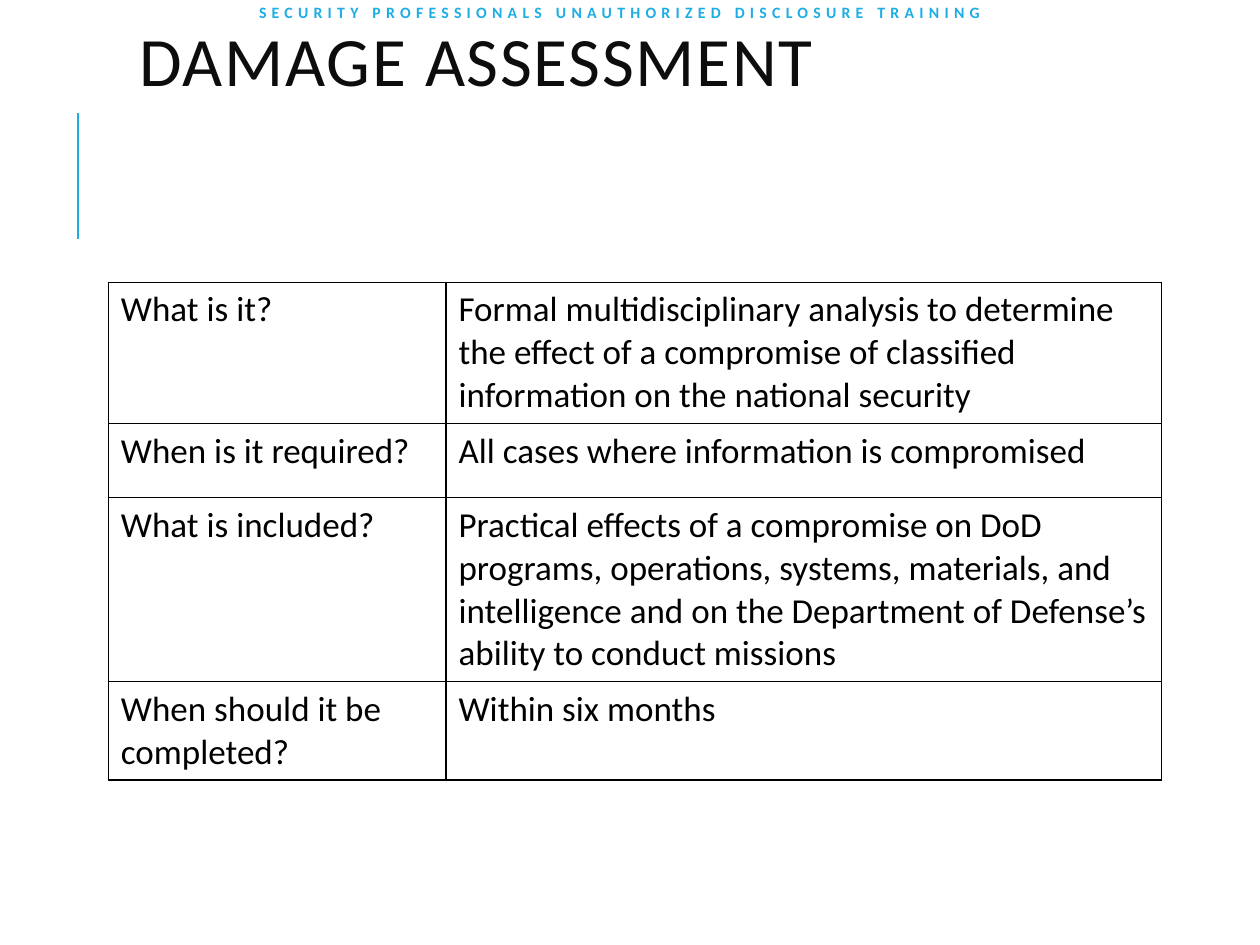
from lxml import etree
from pptx import Presentation
from pptx import util as u
from pptx.dml.color import RGBColor
from pptx.enum import shapes, text
from pptx.oxml import ns

COLORS = {"accent": "1CADE4", "title": "0D0D0D", "ink": "000000"}
FONT = "Calibri"
COLUMN_WIDTHS = [2.68, 5.68]
ROW_HEIGHTS = [1.12, 0.59, 1.46, 0.78]
ASSESSMENT = [
    ("What is it?",
     "Formal multidisciplinary analysis to determine the effect of a "
     "compromise of classified information on the national security"),
    ("When is it required?", "All cases where information is compromised"),
    ("What is included?",
     "Practical effects of a compromise on DoD programs, operations, systems, "
     "materials, and intelligence and on the Department of Defense’s ability "
     "to conduct missions"),
    ("When should it be completed?", "Within six months"),
]


def rgb(name):
    return RGBColor.from_string(COLORS[name])


def format_runs(paragraph, size, color, bold=False, spacing=0):
    for run in paragraph.runs:
        run.font.name = FONT
        run.font.size = u.Pt(size)
        run.font.bold = bold
        run.font.color.rgb = rgb(color)
        if spacing:
            run.font._element.set("spc", str(spacing * 100))


def add_label(slide, wording, box, anchor, margin, **style):
    label = slide.shapes.add_textbox(*map(u.Inches, box))
    frame = label.text_frame
    frame.word_wrap = True
    frame.vertical_anchor = anchor
    frame.margin_left = frame.margin_right = u.Inches(margin)
    frame.margin_top = frame.margin_bottom = u.Inches(margin / 2)
    frame.text = wording
    paragraph = frame.paragraphs[0]
    format_runs(paragraph, **style)
    return paragraph


def add_accent_rule(slide):
    rule = slide.shapes.add_connector(
        shapes.MSO_CONNECTOR.STRAIGHT,
        u.Inches(0.62), u.Inches(1.9), u.Inches(0.62), u.Inches(0.9))
    rule.line.color.rgb = rgb("accent")
    rule.line.width = u.Pt(1.5)
    etree.SubElement(rule._element.spPr, ns.qn("a:effectLst"))


def add_borders(cell):
    properties = cell._tc.get_or_add_tcPr()
    for side in ("lnL", "lnR", "lnT", "lnB"):
        border = etree.SubElement(properties, ns.qn(f"a:{side}"), w=str(u.Pt(1)))
        fill = etree.SubElement(border, ns.qn("a:solidFill"))
        etree.SubElement(fill, ns.qn("a:srgbClr"), val=COLORS["ink"])


def add_assessment_table(slide):
    table = slide.shapes.add_table(
        len(ASSESSMENT), len(COLUMN_WIDTHS), u.Inches(0.86), u.Inches(2.24),
        u.Inches(sum(COLUMN_WIDTHS)), u.Inches(sum(ROW_HEIGHTS))).table
    table.first_row = table.horz_banding = False
    for column, width in zip(table.columns, COLUMN_WIDTHS):
        column.width = u.Inches(width)
    for row, height, wordings in zip(table.rows, ROW_HEIGHTS, ASSESSMENT):
        row.height = u.Inches(height)
        for cell, wording in zip(row.cells, wordings):
            cell.text_frame.text = wording
            format_runs(cell.text_frame.paragraphs[0], 20, "ink")
            add_borders(cell)
            cell.fill.background()


def main():
    deck = Presentation()
    deck.slide_width, deck.slide_height = u.Inches(10), u.Inches(7.5)
    slide = deck.slides.add_slide(deck.slide_layouts[6])
    add_accent_rule(slide)
    course = add_label(
        slide, "SECURITY PROFESSIONALS UNAUTHORIZED DISCLOSURE TRAINING",
        (0.25, 0, 9.33, 0.17), text.MSO_ANCHOR.BOTTOM, 0,
        size=9, color="accent", bold=True, spacing=3)
    course.alignment = text.PP_ALIGN.CENTER
    title = add_label(
        slide, "DAMAGE ASSESSMENT", (1.01, 0.22, 8.49, 0.62),
        text.MSO_ANCHOR.MIDDLE, 0.1, size=39.6, color="title", spacing=1)
    title.line_spacing = 0.8
    add_assessment_table(slide)
    deck.save("out.pptx")


if __name__ == "__main__":
    main()
